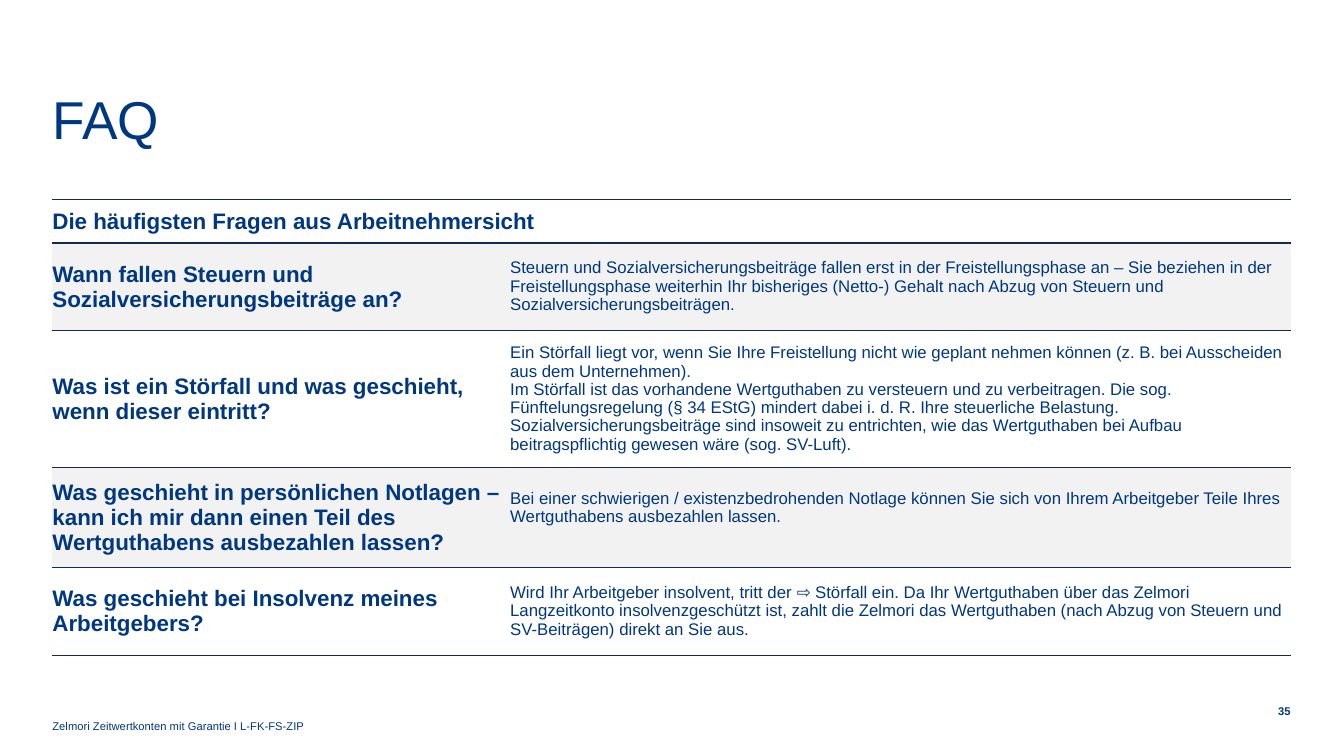
from dataclasses import dataclass

from lxml import etree
from pptx import Presentation
from pptx.dml.color import RGBColor
from pptx.enum.text import MSO_ANCHOR, MSO_AUTO_SIZE, PP_ALIGN
from pptx.oxml.ns import qn
from pptx.util import Inches, Pt

TOP, MIDDLE, BOTTOM = MSO_ANCHOR.TOP, MSO_ANCHOR.MIDDLE, MSO_ANCHOR.BOTTOM
LEFT, RIGHT = PP_ALIGN.LEFT, PP_ALIGN.RIGHT
NO_FIT = MSO_AUTO_SIZE.NONE
TITLE_ONLY = 5


@dataclass(frozen=True)
class Theme:
    font: str = "Arial"
    ink: str = "003781"
    line: str = "122B54"
    band: str = "F2F2F2"
    title: int = 38
    head: int = 16
    body: int = 12
    small: int = 8


THEME = Theme()
EDGE, WIDTH = 0.52, 12.28
PAD = 0.12
COLS = (4.54, 7.74)
HEAD_HIGH = 0.43
HEAD = "Die häufigsten Fragen aus Arbeitnehmersicht"
# question, answer paragraphs, row height, extra space below the answer
FAQS = [
    ("Wann fallen Steuern und Sozialversicherungsbeiträge an?",
     ["Steuern und Sozialversicherungsbeiträge fallen erst in der "
      "Freistellungsphase an – Sie beziehen in der Freistellungsphase "
      "weiterhin Ihr bisheriges (Netto-) Gehalt nach Abzug von Steuern und "
      "Sozialversicherungsbeiträgen."], 0.87, 0),
    ("Was ist ein Störfall und was geschieht, wenn dieser eintritt?",
     ["Ein Störfall liegt vor, wenn Sie Ihre Freistellung nicht wie geplant "
      "nehmen können (z. B. bei Ausscheiden aus dem Unternehmen).",
      "Im Störfall ist das vorhandene Wertguthaben zu versteuern und zu "
      "verbeitragen. Die sog. Fünftelungsregelung (§ 34 EStG) mindert dabei "
      "i. d. R. Ihre steuerliche Belastung. Sozialversicherungsbeiträge sind "
      "insoweit zu entrichten, wie das Wertguthaben bei Aufbau "
      "beitragspflichtig gewesen wäre (sog. SV-Luft)."], 1.36, 0),
    ("Was geschieht in persönlichen Notlagen – kann ich mir dann einen Teil "
     "des Wertguthabens ausbezahlen lassen?",
     ["Bei einer schwierigen / existenzbedrohenden Notlage können Sie sich "
      "von Ihrem Arbeitgeber Teile Ihres Wertguthabens ausbezahlen lassen."],
     0.98, 0.19),
    ("Was geschieht bei Insolvenz meines Arbeitgebers?",
     ["Wird Ihr Arbeitgeber insolvent, tritt der ⇨ Störfall ein. Da Ihr "
      "Wertguthaben über das Zelmori Langzeitkonto insolvenzgeschützt ist, "
      "zahlt die Zelmori das Wertguthaben (nach Abzug von Steuern und "
      "SV-Beiträgen) direkt an Sie aus."], 0.87, 0),
]


def write(frame, lines, size, space, bold=False, align=LEFT):
    for i, line in enumerate(lines):
        para = frame.add_paragraph() if i else frame.paragraphs[0]
        para.text = line
        para.alignment, para.line_spacing = align, space
        look = {"name": THEME.font, "size": Pt(size), "bold": bold}
        for key, value in look.items():
            setattr(para.font, key, value)
        para.font.color.rgb = RGBColor.from_string(THEME.ink)


def place(shape, box, anchor):
    """Move a text shape to its box and take away its margins."""
    for key, value in zip(("left", "top", "width", "height"), box):
        setattr(shape, key, Inches(value))
    form = {"margin_left": 0, "margin_top": 0, "margin_right": 0,
            "margin_bottom": 0, "word_wrap": True, "auto_size": NO_FIT,
            "vertical_anchor": anchor}
    for key, value in form.items():
        setattr(shape.text_frame, key, value)
    return shape.text_frame


def rule(cell, top, bottom):
    """Set the cell's top and bottom lines in points; the sides stay bare."""
    props = cell._tc.get_or_add_tcPr()
    for tag, wide in (("L", 0), ("R", 0), ("T", top), ("B", bottom)):
        line = etree.SubElement(props, qn(f"a:ln{tag}"), w=str(Pt(wide)))
        if wide:
            fill = etree.SubElement(line, qn("a:solidFill"))
            etree.SubElement(fill, qn("a:srgbClr"), val=THEME.line)
        else:
            etree.SubElement(line, qn("a:noFill"))


def dress(cell, pads, lines, band):
    """Set a cell's rules, margins and fill."""
    rule(cell, *lines)
    form = {"margin_left": 0, "margin_right": 0, "margin_top": Inches(pads[0]),
            "margin_bottom": Inches(pads[1]), "vertical_anchor": MIDDLE}
    for key, value in form.items():
        setattr(cell, key, value)
    if band:
        cell.fill.solid()
        cell.fill.fore_color.rgb = RGBColor.from_string(THEME.band)
    else:
        cell.fill.background()


def add_faq(slide, box):
    highs = [HEAD_HIGH] + [faq[2] for faq in FAQS]
    frame = slide.shapes.add_table(len(highs), len(COLS), *map(Inches, box))
    table = frame.table
    table.first_row = table.horz_banding = False
    for col, wide in zip(table.columns, COLS):
        col.width = Inches(wide)
    for row, high in zip(table.rows, highs):
        row.height = Inches(high)

    for cell in table.rows[0].cells:
        dress(cell, (0, 0), (1, 1), False)
    first = table.cell(0, 0)
    first.merge(table.cell(0, 1))
    write(first.text_frame, [HEAD], THEME.head, Pt(18), True)

    for i, (ask, reply, _, extra) in enumerate(FAQS, 1):
        left, right = table.rows[i].cells
        lines = (1 if i == 1 else 0.5, 0.5)
        dress(left, (PAD, PAD), lines, i % 2)
        dress(right, (PAD, PAD + extra), lines, i % 2)
        write(left.text_frame, [ask], THEME.head, Pt(18), True)
        write(right.text_frame, reply, THEME.body, 0.97)


def add_title(slide, box):
    frame = place(slide.shapes.title, box, TOP)
    write(frame, ["FAQ"], THEME.title, Pt(38))


def add_foot(slide, box):
    """Place the source line at left and the page number at right."""
    x, y, wide, high = box
    note = slide.shapes.add_textbox(0, 0, 0, 0)
    write(place(note, (x, y, 10.2, high), BOTTOM),
          ["Zelmori Zeitwertkonten mit Garantie I L-FK-FS-ZIP"],
          THEME.small, 0.9)
    page = slide.shapes.add_textbox(0, 0, 0, 0)
    write(place(page, (x + wide - 0.29, y + 0.08, 0.29, 0.16), MIDDLE),
          ["35"], THEME.small, Pt(10), True, RIGHT)


def main():
    deck = Presentation()
    deck.slide_width, deck.slide_height = Inches(13.33), Inches(7.5)
    slide = deck.slides.add_slide(deck.slide_layouts[TITLE_ONLY])
    add_title(slide, (EDGE, 0.96, 10.2, 1.02))
    add_faq(slide, (EDGE, 1.98, WIDTH, 4.51))
    add_foot(slide, (EDGE, 6.89, WIDTH, 0.38))
    deck.save("out.pptx")


if __name__ == "__main__":
    main()
